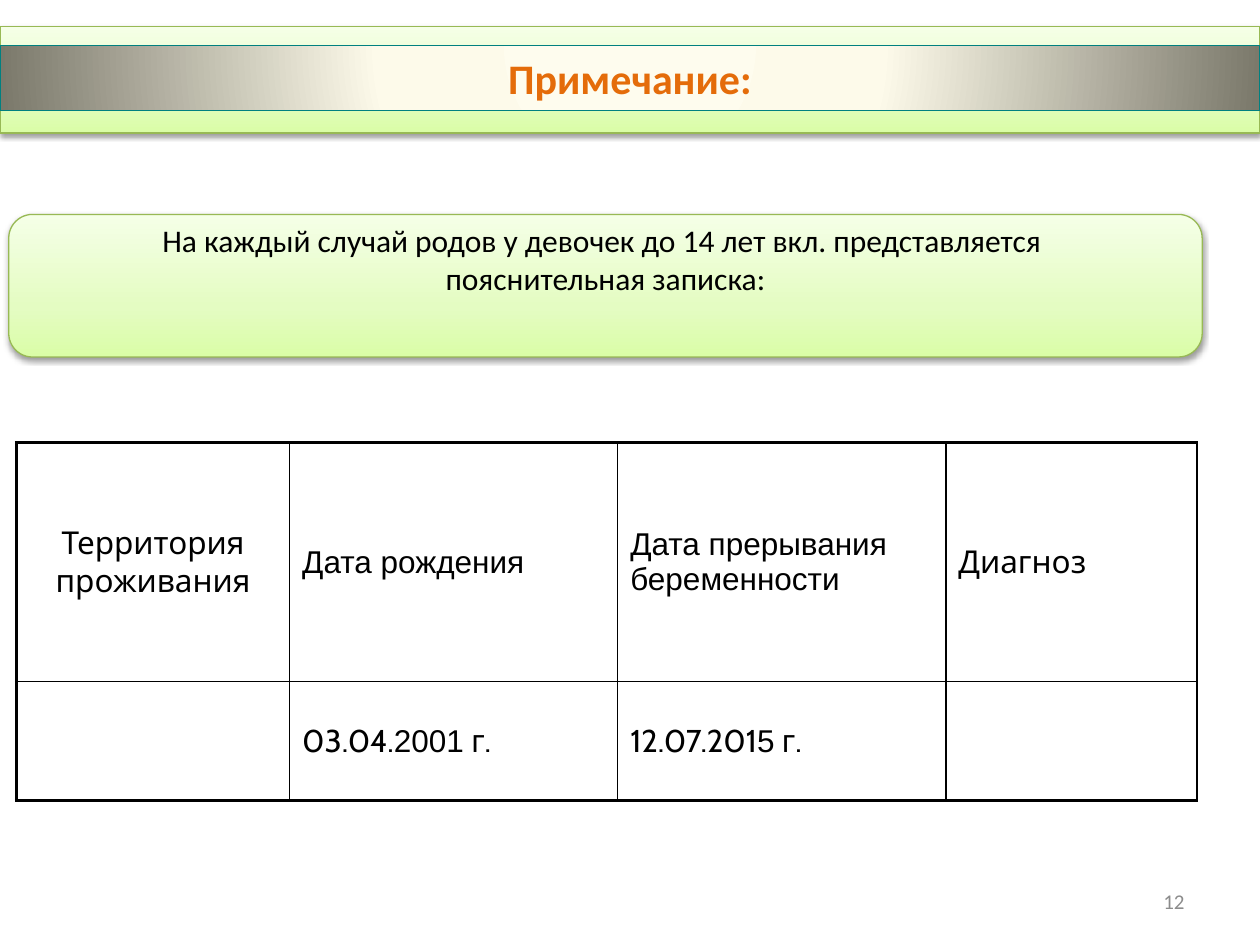
"""Build a slide with a title band, a note box and a table of cases."""
from lxml import etree
from pptx import Presentation
from pptx import util as u
from pptx.dml.color import RGBColor
from pptx.enum import shapes, text
from pptx.oxml import parse_xml

Pt = u.Pt
NS = 'xmlns:a="http://schemas.openxmlformats.org/drawingml/2006/main"'
GREEN = [(0, "DAFDA7"), (35, "E4FCC2"), (100, "F5FFE7")]
CREAM = [(0, "FEFCEE"), (40, "FDFAEA"), (100, "7B796B")]
LINEAR = '<a:lin ang="16200000" scaled="0"/>'
ROUND = ('<a:path path="circle"><a:fillToRect l="50000" t="-80000" '
         'r="50000" b="180000"/></a:path>')
SHADE = ('<a:outerShdw blurRad="40000" dist="20000" dir="5400000" rotWithShape="0">'
         '<a:srgbClr val="000000"><a:alpha val="38000"/></a:srgbClr></a:outerShdw>')


def style(run, size, font, color, bold=False):
    """Format one run."""
    run.font.size, run.font.name, run.font.bold = Pt(size), font, bold
    run.font.color.rgb = RGBColor.from_string(color)


def panel(kind, box, stops, path, edge, shade=""):
    """Add a gradient shape with an outline and an optional shadow."""
    shape = slide.shapes.add_shape(kind, *map(Pt, box))
    marks = "".join(f'<a:gs pos="{pos * 1000}"><a:srgbClr val="{color}"/></a:gs>'
                    for pos, color in stops)
    props = shape._element.spPr
    props.append(parse_xml(f'<a:gradFill {NS} rotWithShape="1">'
                           f'<a:gsLst>{marks}</a:gsLst>{path}</a:gradFill>'))
    shape.line.color.rgb = RGBColor.from_string(edge)
    shape.line.width = Pt(0.75)
    props.append(parse_xml(f'<a:effectLst {NS}>{shade}</a:effectLst>'))
    return shape


deck = Presentation()
deck.slide_width, deck.slide_height = Pt(720), Pt(540)
slide = deck.slides.add_slide(deck.slide_layouts[6])
kinds = shapes.MSO_SHAPE

panel(kinds.RECTANGLE, (0, 15, 720, 61), GREEN, LINEAR, "98B955", SHADE)
title = panel(kinds.RECTANGLE, (0, 26, 720, 37), CREAM, ROUND, "008080")
note = panel(kinds.ROUNDED_RECTANGLE, (5, 122.5, 682, 81.5), GREEN, LINEAR, "98B955", SHADE)
page = slide.shapes.add_textbox(Pt(516), Pt(500.5), Pt(168), Pt(29))

note.text_frame.margin_top = 0
texts = [
    (title, "Примечание:", 24, "E46C0A", "CENTER", "MIDDLE"),
    (note, "На каждый случай родов у девочек до 14 лет вкл. представляется \n"
           "пояснительная записка:", 18, "000000", "CENTER", "TOP"),
    (page, "12", 12, "8C8C8C", "RIGHT", "MIDDLE"),
]
for shape, words, size, color, align, anchor in texts:
    frame = shape.text_frame
    frame.text = words
    frame.word_wrap = shape is not note
    frame.vertical_anchor = text.MSO_ANCHOR[anchor]
    for para in frame.paragraphs:
        para.alignment = text.PP_ALIGN[align]
        style(para.runs[0], size, "Calibri", color, shape is title)

rows = [
    [[("Территория проживания", "Cabin")], [("Дата рождения", "Arial")],
     [("Дата прерывания беременности", "Arial")], [("Диагноз", "Cabin")]],
    [[], [("03.04.", "Cabin"), ("2001", "Arial"), (" г.", "Cabin")],
     [("12.07.201", "Cabin"), ("5", "Arial"), (" г.", "Cabin")], []],
]
grid = slide.shapes.add_table(2, 4, Pt(9.5), Pt(253), Pt(674.5), Pt(204.5)).table
grid.first_row = grid.horz_banding = False
for col, width in zip(grid.columns, (156, 187.5, 187.5, 143.5)):
    col.width = Pt(width)
for row, height in zip(grid.rows, (136.5, 68)):
    row.height = Pt(height)

for i, row in enumerate(rows):
    for j, runs in enumerate(row):
        cell = grid.cell(i, j)
        cell.vertical_anchor = text.MSO_ANCHOR.MIDDLE
        para = cell.text_frame.paragraphs[0]
        if j == 0:
            para.alignment = text.PP_ALIGN.CENTER
        for words, font in runs:
            run = para.add_run()
            run.text = words
            style(run, 18, font, "000000")
        props = cell._tc.get_or_add_tcPr()
        for side, thick in (("L", j == 0), ("R", False), ("T", i == 0), ("B", i == 1)):
            width = Pt(2.25 if thick else 1)
            props.append(etree.fromstring(
                f'<a:ln{side} {NS} w="{width}"><a:solidFill><a:srgbClr val="000000"/>'
                f'</a:solidFill></a:ln{side}>'))
        cell.fill.background()

deck.save("out.pptx")
